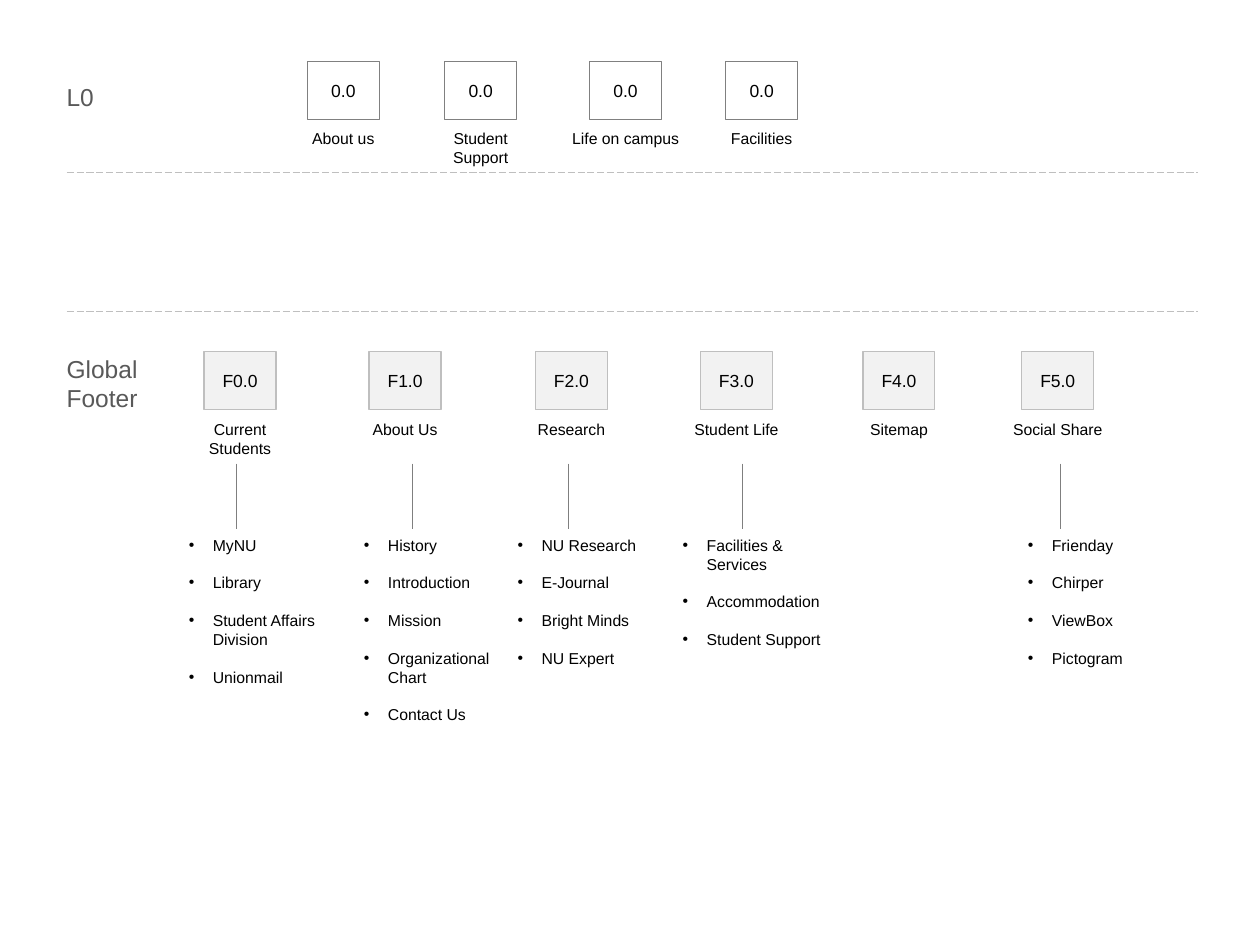
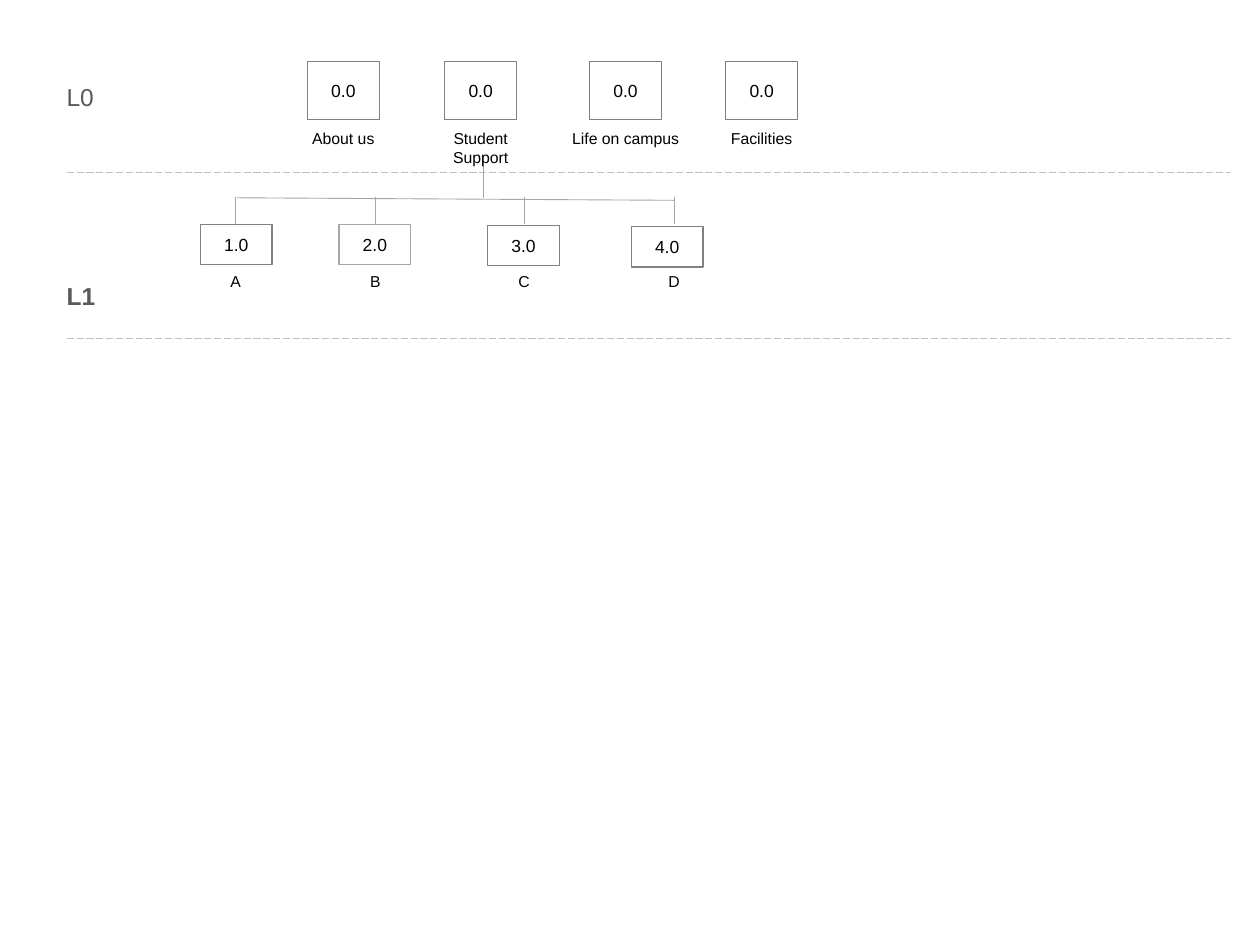
import pptx
import pptx.util
import pptx.dml.color
import pptx.enum.dml
import pptx.enum.shapes
import pptx.enum.text
import pptx.oxml.ns
import lxml.etree

Inches = pptx.util.Inches
Pt = pptx.util.Pt
RGBColor = pptx.dml.color.RGBColor
Align = pptx.enum.text.PP_ALIGN
Anchor = pptx.enum.text.MSO_ANCHOR
qn = pptx.oxml.ns.qn

FONT = "Arial"
BLACK = RGBColor(0x00, 0x00, 0x00)
SLATE = RGBColor(0x59, 0x59, 0x59)
STEM = RGBColor(0x7F, 0x7F, 0x7F)
EDGE = RGBColor(0x80, 0x80, 0x80)
BRANCH = RGBColor(0xA6, 0xA6, 0xA6)
RULE = RGBColor(0xBF, 0xBF, 0xBF)
PALE = RGBColor(0xF2, 0xF2, 0xF2)

BOX_W = 0.57
TALL, SHORT = 0.46, 0.32
LABEL_W, WIDE_W = 0.96, 1.2
LIST_TOP = 4.2

TOP_ROW = [
    ("About us", 2.44, LABEL_W),
    ("Student Support", 3.53, LABEL_W),
    ("Life on campus", 4.68, WIDE_W),
    ("Facilities", 5.76, LABEL_W),
]
FOOTER = [
    ("Current Students", 1.62),
    ("About Us", 2.93),
    ("Research", 4.25),
    ("Student Life", 5.56),
    ("Sitemap", 6.85),
    ("Social Share", 8.11),
]
LISTS = [
    (1.4, 1.88, ["MyNU", "Library", "Student Affairs Division", "Unionmail"]),
    (2.79, 3.27, ["History", "Introduction", "Mission",
                  "Organizational Chart", "Contact Us"]),
    (4.01, 4.51, ["NU Research", "E-Journal", "Bright Minds", "NU Expert"]),
    (5.32, 5.89, ["Facilities & Services", "Accommodation", "Student Support"]),
    (8.06, 8.42, ["Frienday", "Chirper", "ViewBox", "Pictogram"]),
]
CHILDREN = [
    ("A", 1.59, 1.78, 1.87, EDGE),
    ("B", 2.69, 1.78, 2.98, BRANCH),
    ("C", 3.87, 1.79, 4.16, EDGE),
    ("D", 5.01, 1.8, 5.35, EDGE),
]


def add_run(para, text, size, color=BLACK, bold=False):
    run = para.add_run()
    run.text = text
    run.font.name = FONT
    run.font.size = Pt(size)
    run.font.bold = bold
    run.font.color.rgb = color


def add_frame(slide, left, top, width, height):
    box = slide.shapes.add_textbox(
        Inches(left), Inches(top), Inches(width), Inches(height))
    frame = box.text_frame
    frame.word_wrap = True
    frame.auto_size = pptx.enum.text.MSO_AUTO_SIZE.SHAPE_TO_FIT_TEXT
    return frame


def add_level(slide, text, top, width=0.72, height=0.34, bold=False):
    frame = add_frame(slide, 0.43, top, width, height)
    add_run(frame.paragraphs[0], text, 14, SLATE, bold)


def add_label(slide, text, mid, top, width=LABEL_W):
    para = add_frame(slide, mid - width / 2, top, width, 0.25).paragraphs[0]
    para.alignment = Align.CENTER
    add_run(para, text, 9)


def add_box(slide, code, left, top, height, edge=EDGE, fill=None):
    box = slide.shapes.add_shape(
        pptx.enum.shapes.MSO_SHAPE.RECTANGLE,
        Inches(left), Inches(top), Inches(BOX_W), Inches(height))
    box.shadow.inherit = False
    if fill is None:
        box.fill.background()
    else:
        box.fill.solid()
        box.fill.fore_color.rgb = fill
    box.line.color.rgb = edge
    box.line.width = Pt(0)
    frame = box.text_frame
    frame.vertical_anchor = Anchor.MIDDLE
    frame.margin_top = frame.margin_bottom = 0
    para = frame.paragraphs[0]
    para.alignment = Align.CENTER
    add_run(para, code, 10)


def add_line(slide, start, end, color, dash=False):
    line = slide.shapes.add_connector(
        pptx.enum.shapes.MSO_CONNECTOR.STRAIGHT,
        *(Inches(value) for value in start + end))
    line.line.color.rgb = color
    line.line.width = Pt(0.5)
    if dash:
        line.line.dash_style = pptx.enum.dml.MSO_LINE.LONG_DASH
    props = line._element.find(qn("p:spPr"))
    lxml.etree.SubElement(props, qn("a:effectLst"))


def add_rules(slide, right, tops):
    for top in tops:
        add_line(slide, (0.53, top), (right, top), RULE, dash=True)


def add_list(slide, left, items):
    frame = add_frame(slide, left, LIST_TOP, 1.41, 1.16)
    for index, item in enumerate(items):
        para = frame.add_paragraph() if index else frame.paragraphs[0]
        para.space_before = Pt(10.7 if index else 0)
        props = para._p.get_or_add_pPr()
        props.set("marL", str(Inches(0.19)))
        props.set("indent", str(-Inches(0.19)))
        lxml.etree.SubElement(props, qn("a:buFont")).set("typeface", FONT)
        lxml.etree.SubElement(props, qn("a:buChar")).set("char", "•")
        add_run(para, item, 9)


def add_top(slide):
    add_level(slide, "L0", 0.6)
    for label, left, width in TOP_ROW:
        add_box(slide, "0.0", left, 0.49, TALL)
        add_label(slide, label, left + BOX_W / 2, 0.97, width)


def draw_footer(slide):
    add_rules(slide, 9.51, (1.37, 2.47))
    add_top(slide)
    add_level(slide, "Global Footer", 2.76, 0.91, 0.57)
    for index, (label, left) in enumerate(FOOTER):
        add_box(slide, f"F{index}.0", left, 2.79, TALL, RULE, PALE)
        add_label(slide, label, left + BOX_W / 2, 3.28)
    for left, stem, items in LISTS:
        add_line(slide, (stem, 3.68), (stem, LIST_TOP), STEM)
        add_list(slide, left, items)


def draw_tree(slide):
    add_rules(slide, 9.77, (1.37, 2.69))
    add_level(slide, "L1", 2.18, bold=True)
    add_line(slide, (3.84, 1.23), (3.84, 1.57), BRANCH)
    add_line(slide, (1.88, 1.57), (5.35, 1.59), BRANCH)
    for index, (label, left, top, stem, edge) in enumerate(CHILDREN, 1):
        add_line(slide, (stem, 1.56), (stem, 1.78), BRANCH)
        add_box(slide, f"{index}.0", left, top, SHORT, edge)
        add_label(slide, label, stem, 2.11)
    add_top(slide)


def main():
    deck = pptx.Presentation()
    deck.slide_width = Inches(10)
    deck.slide_height = Inches(7.5)
    blank = deck.slide_layouts[6]
    for draw in (draw_footer, draw_tree):
        draw(deck.slides.add_slide(blank))
    deck.save("out.pptx")


if __name__ == "__main__":
    main()
